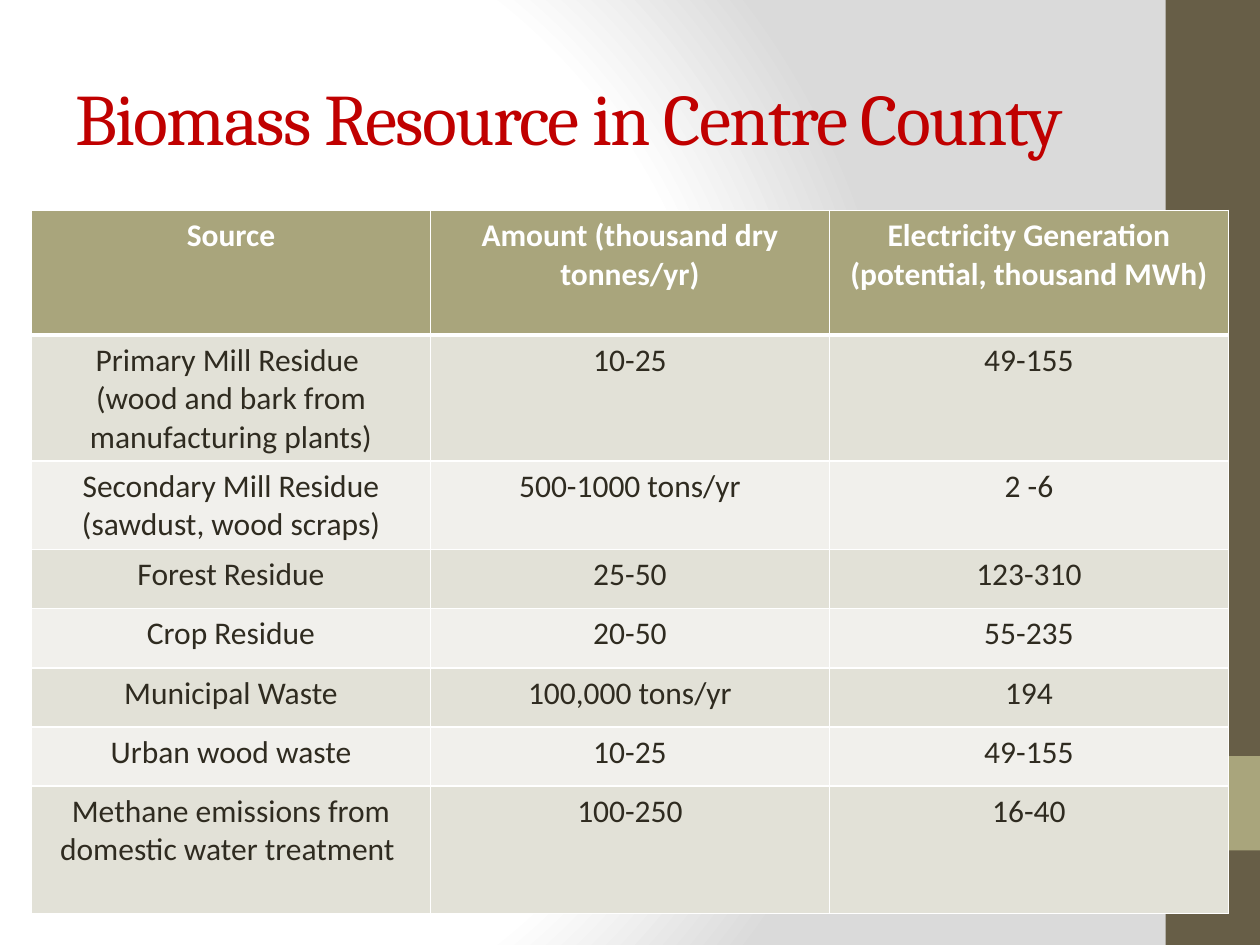
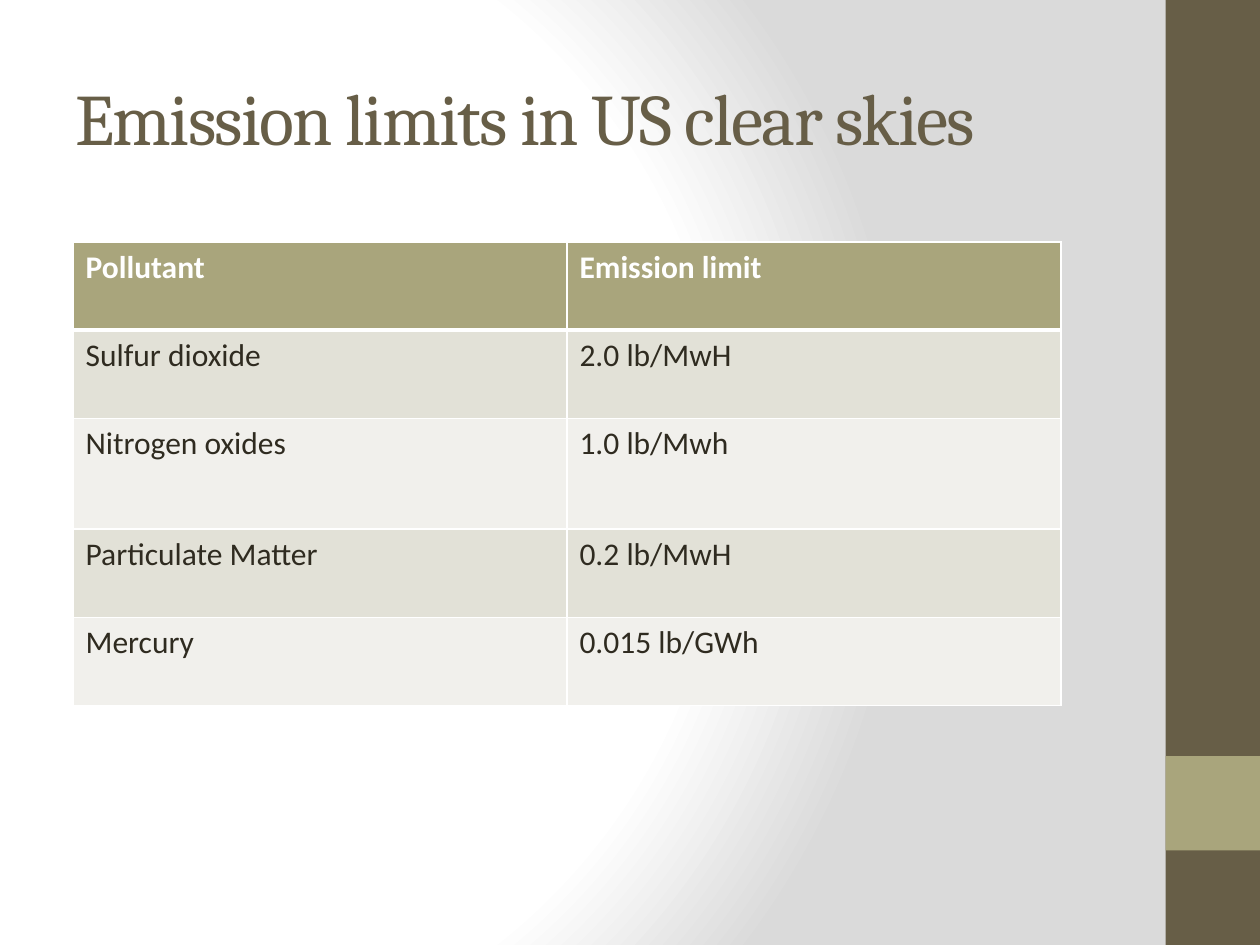
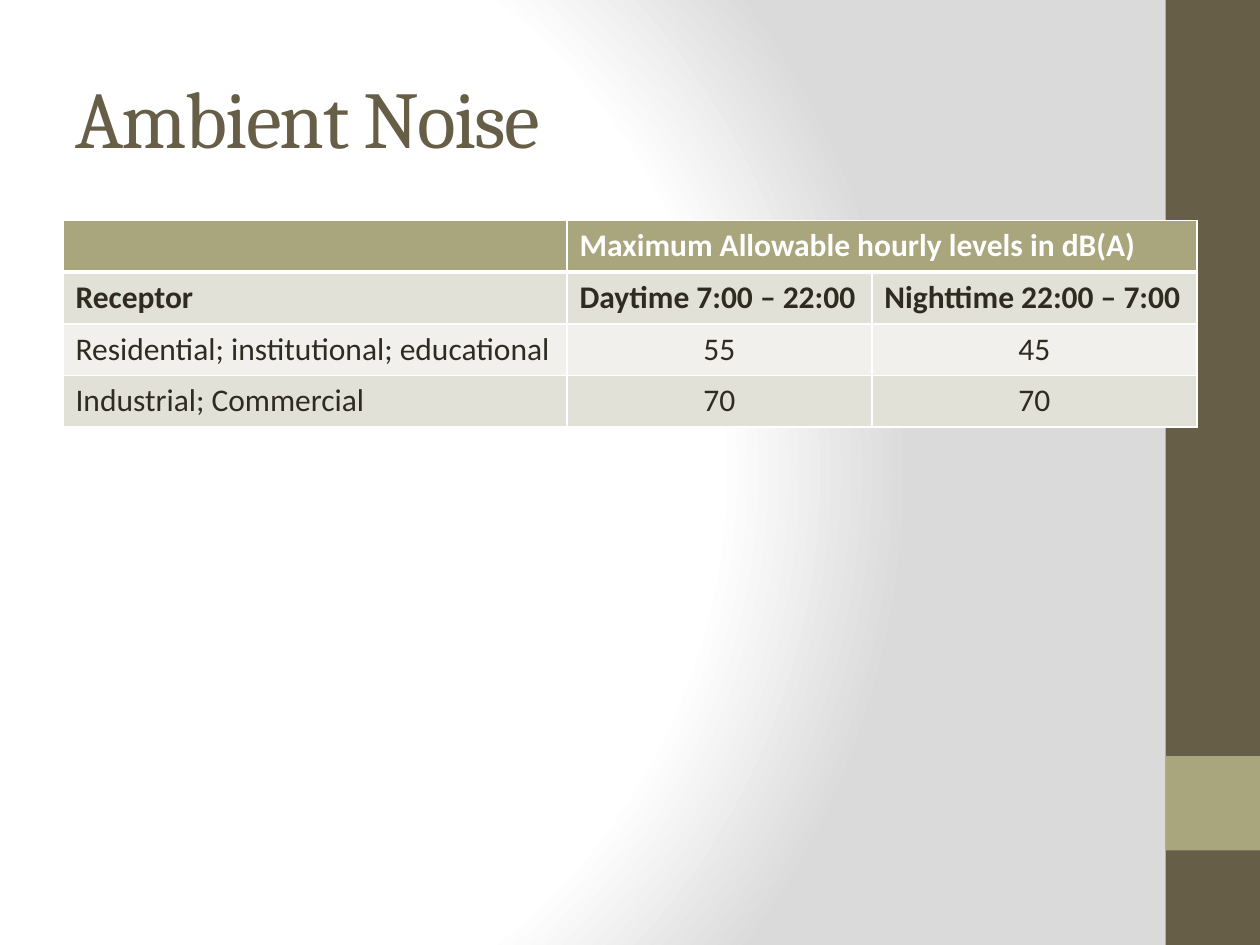
from lxml import etree
from pptx import Presentation
from pptx.dml.color import RGBColor
from pptx.enum.shapes import MSO_SHAPE
from pptx.enum.text import MSO_ANCHOR, PP_ALIGN
from pptx.oxml import parse_xml
from pptx.oxml.ns import nsdecls, qn
from pptx.util import Inches, Pt

RECTANGLE = MSO_SHAPE.RECTANGLE
MIDDLE = MSO_ANCHOR.MIDDLE
LEFT, CENTER = PP_ALIGN.LEFT, PP_ALIGN.CENTER

WHITE = RGBColor(0xFF, 0xFF, 0xFF)
BROWN = RGBColor(0x67, 0x5E, 0x47)
OLIVE = RGBColor(0xA9, 0xA5, 0x7C)
RED = RGBColor(0xC0, 0x00, 0x00)
INK = RGBColor(0x2F, 0x2B, 0x20)
ROW_DARK = RGBColor(0xE2, 0xE1, 0xD7)
ROW_LIGHT = RGBColor(0xF1, 0xF0, 0xEC)
BACKDROP_EDGE = RGBColor(0xDA, 0xDA, 0xDA)

BANDS = [(0, 7.5, BROWN), (6, 0.75, OLIVE)]

TOPICS = [
    {
        "title": "Biomass Resource in Centre County",
        "title_size": 41.4,
        "title_color": RED,
        "place": (0.25, 1.67),
        "columns": [9.5 / 3] * 3,
        "heights": [0.99, 0.99, 0.69] + [0.47] * 4 + [1.01],
        "bold_rows": 1,
        "centered_from": (0, 0),
        "rows": [
            ["Source", "Amount (thousand dry tonnes/yr)",
             "Electricity Generation\n(potential, thousand MWh)"],
            ["Primary Mill Residue \n(wood and bark from manufacturing plants)",
             "10-25", "49-155"],
            ["Secondary Mill Residue (sawdust, wood scraps)", "500-1000 tons/yr", "2 -6"],
            ["Forest Residue", "25-50", "123-310"],
            ["Crop Residue", "20-50", "55-235"],
            ["Municipal Waste", "100,000 tons/yr", "194"],
            ["Urban wood waste", "10-25", "49-155"],
            ["Methane emissions from domestic water treatment ", "100-250", "16-40"],
        ],
    },
    {
        "title": "Emission limits in US clear skies",
        "title_size": 41.4,
        "title_color": BROWN,
        "place": (0.58, 1.92),
        "columns": [3.92] * 2,
        "heights": [0.7, 0.7, 0.88, 0.7, 0.7],
        "bold_rows": 1,
        "centered_from": None,
        "rows": [
            ["Pollutant", "Emission limit"],
            ["Sulfur dioxide", "2.0 lb/MwH"],
            ["Nitrogen oxides", "1.0 lb/Mwh"],
            ["Particulate Matter", "0.2 lb/MwH"],
            ["Mercury", "0.015 lb/GWh"],
        ],
    },
    {
        "title": "Ambient Noise",
        "title_size": 46,
        "title_color": BROWN,
        "place": (0.5, 1.75),
        "columns": [4, 2.42, 2.58],
        "heights": [0.41] * 4,
        "bold_rows": 2,
        "centered_from": (2, 1),
        "rows": [
            ["", "Maximum Allowable hourly levels in dB(A)", None],
            ["Receptor", "Daytime 7:00 – 22:00", "Nighttime 22:00 – 7:00"],
            ["Residential; institutional; educational", "55", "45"],
            ["Industrial; Commercial", "70", "70"],
        ],
    },
]


def write_text(frame, text, font="Calibri", size=18, color=INK, bold=False,
               align=LEFT, spacing=0):
    frame.text = text
    for paragraph in frame.paragraphs:
        paragraph.alignment = align
        paragraph.font.size = Pt(size)
        for run in paragraph.runs:
            run.font.name = font
            run.font.size = Pt(size)
            run.font.bold = bold
            run.font.color.rgb = color
            if spacing:
                run.font._element.set("spc", str(spacing * 100))


def add_border(cell, side, points):
    line = etree.SubElement(cell._tc.get_or_add_tcPr(), qn(f"a:ln{side}"), w=str(Pt(points)))
    fill = etree.SubElement(line, qn("a:solidFill"))
    etree.SubElement(fill, qn("a:srgbClr"), val=str(WHITE))


prs = Presentation()
prs.slide_width = Inches(10)
prs.slide_height = Inches(7.5)

master = prs.slide_master
master.background.fill.solid()
backdrop = master.element.find(".//" + qn("p:bgPr"))
stops = "".join(
    f'<a:gs pos="{position * 1000}"><a:srgbClr val="{color}"/></a:gs>'
    for position, color in [(0, WHITE), (75, WHITE), (100, BACKDROP_EDGE)]
)
backdrop.replace(backdrop[0], parse_xml(
    f'<a:gradFill {nsdecls("a")} rotWithShape="1"><a:gsLst>{stops}</a:gsLst>'
    '<a:path path="circle"><a:fillToRect l="20000" t="50000" r="100000" b="50000"/>'
    '</a:path></a:gradFill>'
))

for topic in TOPICS:
    slide = prs.slides.add_slide(prs.slide_layouts[6])

    for top, height, color in BANDS:
        band = slide.shapes.add_shape(
            RECTANGLE, Inches(9.25), Inches(top), Inches(0.75), Inches(height))
        band.shadow.inherit = False
        band.fill.solid()
        band.fill.fore_color.rgb = color
        band.line.fill.background()

    heading = slide.shapes.add_textbox(
        Inches(0.5), Inches(0.3), Inches(8.33), Inches(1.25)).text_frame
    heading.word_wrap = True
    heading.vertical_anchor = MIDDLE
    write_text(heading, topic["title"], font="Cambria", size=topic["title_size"],
               color=topic["title_color"], spacing=-1)

    rows, columns, heights = topic["rows"], topic["columns"], topic["heights"]
    left, top = topic["place"]
    table = slide.shapes.add_table(
        len(rows), len(columns), Inches(left), Inches(top),
        Inches(sum(columns)), Inches(sum(heights))).table
    for column, width in zip(table.columns, columns):
        column.width = Inches(width)
    for row, height in zip(table.rows, heights):
        row.height = Inches(height)

    centered_from = topic["centered_from"]
    for r, entries in enumerate(rows):
        for c, entry in enumerate(entries):
            cell = table.cell(r, c)
            for side in "LRTB":
                under_header = (r, side) in [(0, "B"), (1, "T")]
                add_border(cell, side, 3 if under_header else 1)
            cell.fill.solid()
            cell.fill.fore_color.rgb = (
                OLIVE if r == 0 else ROW_DARK if r % 2 else ROW_LIGHT)
            if entry is None:
                table.cell(r, c - 1).merge(cell)
                continue
            centered = centered_from and r >= centered_from[0] and c >= centered_from[1]
            write_text(cell.text_frame, entry, color=WHITE if r == 0 else INK,
                       bold=r < topic["bold_rows"], align=CENTER if centered else LEFT)

prs.save("out.pptx")
